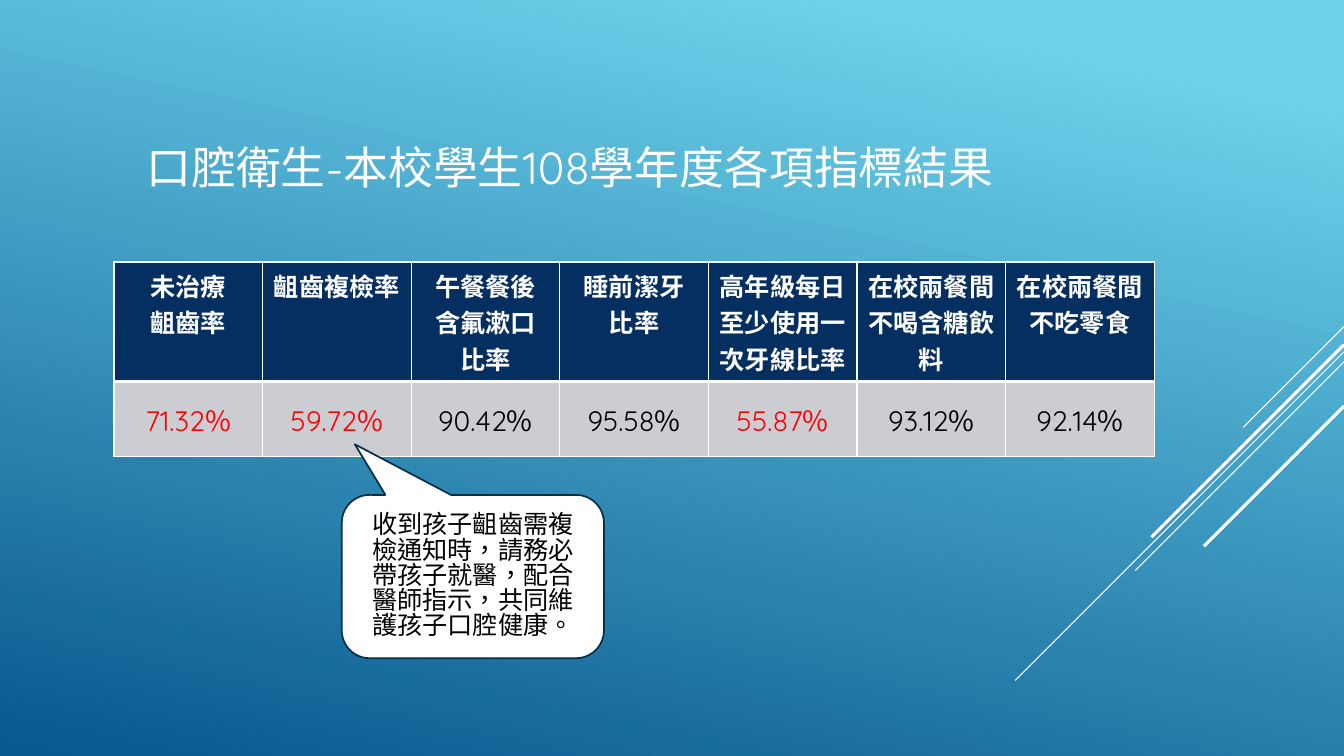
"""Build a slide with a school's oral hygiene indicators for the 108 school year."""
from dataclasses import dataclass

from lxml import etree
from pptx import Presentation
from pptx.dml.color import RGBColor
from pptx.enum.shapes import MSO_CONNECTOR, MSO_SHAPE
from pptx.enum.text import MSO_ANCHOR, MSO_AUTO_SIZE, PP_ALIGN
from pptx.oxml import parse_xml
from pptx.oxml.ns import nsdecls, qn
from pptx.util import Inches, Pt

STRAIGHT = MSO_CONNECTOR.STRAIGHT
CALLOUT = MSO_SHAPE.ROUNDED_RECTANGULAR_CALLOUT
MIDDLE, TOP = MSO_ANCHOR.MIDDLE, MSO_ANCHOR.TOP
CENTER = PP_ALIGN.CENTER
NO_AUTOFIT = MSO_AUTO_SIZE.NONE


@dataclass(frozen=True)
class Theme:
    latin: str = "Quicksand"
    asian: str = "Noto Sans CJK JP"
    white: str = "FFFFFF"
    black: str = "000000"
    alert: str = "FF0000"
    header: str = "052F61"
    body: str = "CCCDD2"
    outline: str = "043148"
    sky: str = "6ED2EB"
    sea: str = "06588E"
    title_size: int = 32
    value_size: int = 20
    text_size: int = 18


THEME = Theme()


def write_text(frame, paragraphs, size=THEME.text_size, color=THEME.black,
               bold=False, anchor=MIDDLE, spacing=None):
    """Fill a text frame; each paragraph is a list of (text, latin font) runs."""
    frame.vertical_anchor = anchor
    for index, runs in enumerate(paragraphs):
        paragraph = frame.paragraphs[0] if index == 0 else frame.add_paragraph()
        paragraph.alignment = CENTER
        if spacing:
            paragraph.line_spacing = spacing
        for text, font_name in runs:
            run = paragraph.add_run()
            run.text = text
            run.font.name = font_name
            run.font.size = Pt(size)
            run.font.bold = bold
            run.font.color.rgb = RGBColor.from_string(color)
            properties = run.font._element
            properties.set("lang", "zh-TW")
            latin = properties.find(qn("a:latin"))
            asian = etree.Element(qn("a:ea"), typeface=THEME.asian)
            latin.addnext(asian)


def style_cell(cell, fill, borders):
    """Set the fill and the white borders of a cell, widths in points by side."""
    properties = cell._tc.get_or_add_tcPr()
    for side, width in borders.items():
        properties.append(parse_xml(
            f'<a:ln{side} {nsdecls("a")} w="{Pt(width)}"><a:solidFill>'
            f'<a:srgbClr val="{THEME.white}"/></a:solidFill></a:ln{side}>'))
    cell.fill.solid()
    cell.fill.fore_color.rgb = RGBColor.from_string(fill)


presentation = Presentation()
presentation.slide_width = Inches(13.33)
presentation.slide_height = Inches(7.5)
slide = presentation.slides.add_slide(presentation.slide_layouts[5])

background = slide.background.fill
background.gradient()
background.gradient_angle = 258
for stop, position, color in zip(background.gradient_stops, (0.1, 1), (THEME.sky, THEME.sea)):
    stop.position = position
    stop.color.rgb = RGBColor.from_string(color)

RIGHT_EDGE = 13.33
DIAGONALS = [(3.24, 1, 0.75), (3.49, 3.26, 0.75), (3.59, 2.07, 0.75),
             (3.42, 1.91, 2.25), (4.03, 1.39, 2.25)]
for top, reach, width in DIAGONALS:
    diagonal = slide.shapes.add_connector(
        STRAIGHT, Inches(RIGHT_EDGE), Inches(top),
        Inches(RIGHT_EDGE - reach), Inches(top + reach))
    diagonal.line.color.rgb = RGBColor.from_string(THEME.white)
    diagonal.line.width = Pt(width)
    etree.SubElement(diagonal._element.spPr, qn("a:effectLst"))

title = slide.shapes.title
title.left, title.top = Inches(1.13), Inches(1.29)
title.width, title.height = Inches(9.05), Inches(0.72)
title.text_frame.auto_size = NO_AUTOFIT
title.text_frame.word_wrap = False
write_text(title.text_frame, [[("口腔衛生-本校學生108學年度各項指標結果", THEME.latin)]],
           size=THEME.title_size, color=THEME.white)

INDICATORS = [
    (["未治療", "齟齒率"], "71.32", THEME.alert),
    (["齟齒複檢率"], "59.72", THEME.alert),
    (["午餐餐後", "含氟漱口", "比率"], "90.42", THEME.black),
    (["睡前潔牙", "比率"], "95.58", THEME.black),
    (["高年級每日至少使用一次牙線比率"], "55.87", THEME.alert),
    (["在校兩餐間不喝含糖飲料"], "93.12", THEME.black),
    (["在校兩餐間", "不吃零食"], "92.14", THEME.black),
]
table = slide.shapes.add_table(2, len(INDICATORS), Inches(1.13), Inches(2.6),
                               Inches(10.32), Inches(1.9)).table
table.rows[0].height, table.rows[1].height = Inches(1.16), Inches(0.74)
for column, (heading, value, color) in enumerate(INDICATORS):
    header_cell, value_cell = table.cell(0, column), table.cell(1, column)
    style_cell(header_cell, THEME.header, {"L": 1, "R": 1, "T": 1, "B": 3})
    style_cell(value_cell, THEME.body, {"L": 1, "R": 1, "T": 3, "B": 1})
    write_text(header_cell.text_frame, [[(line, THEME.latin)] for line in heading],
               color=THEME.white, bold=True, anchor=TOP)
    write_text(value_cell.text_frame, [[(value, THEME.latin), ("%", THEME.asian)]],
               size=THEME.value_size, color=color)
    value_cell.vertical_anchor = MIDDLE

callout = slide.shapes.add_shape(CALLOUT, Inches(3.39), Inches(4.91), Inches(2.6), Inches(1.62))
for index, adjustment in enumerate((-0.45, -0.81, 0.17)):
    callout.adjustments[index] = adjustment
callout.shadow.inherit = False
callout.fill.solid()
callout.fill.fore_color.rgb = RGBColor.from_string(THEME.white)
callout.line.color.rgb = RGBColor.from_string(THEME.outline)
callout.line.width = Pt(1.25)
callout.text_frame.word_wrap = True
write_text(callout.text_frame,
           [[("收到孩子齟齒需複檢通知時，請務必帶孩子就醫，配合醫師指示，共同維護孩子口腔健康。",
              THEME.latin)]], spacing=0.83)

presentation.save("out.pptx")
